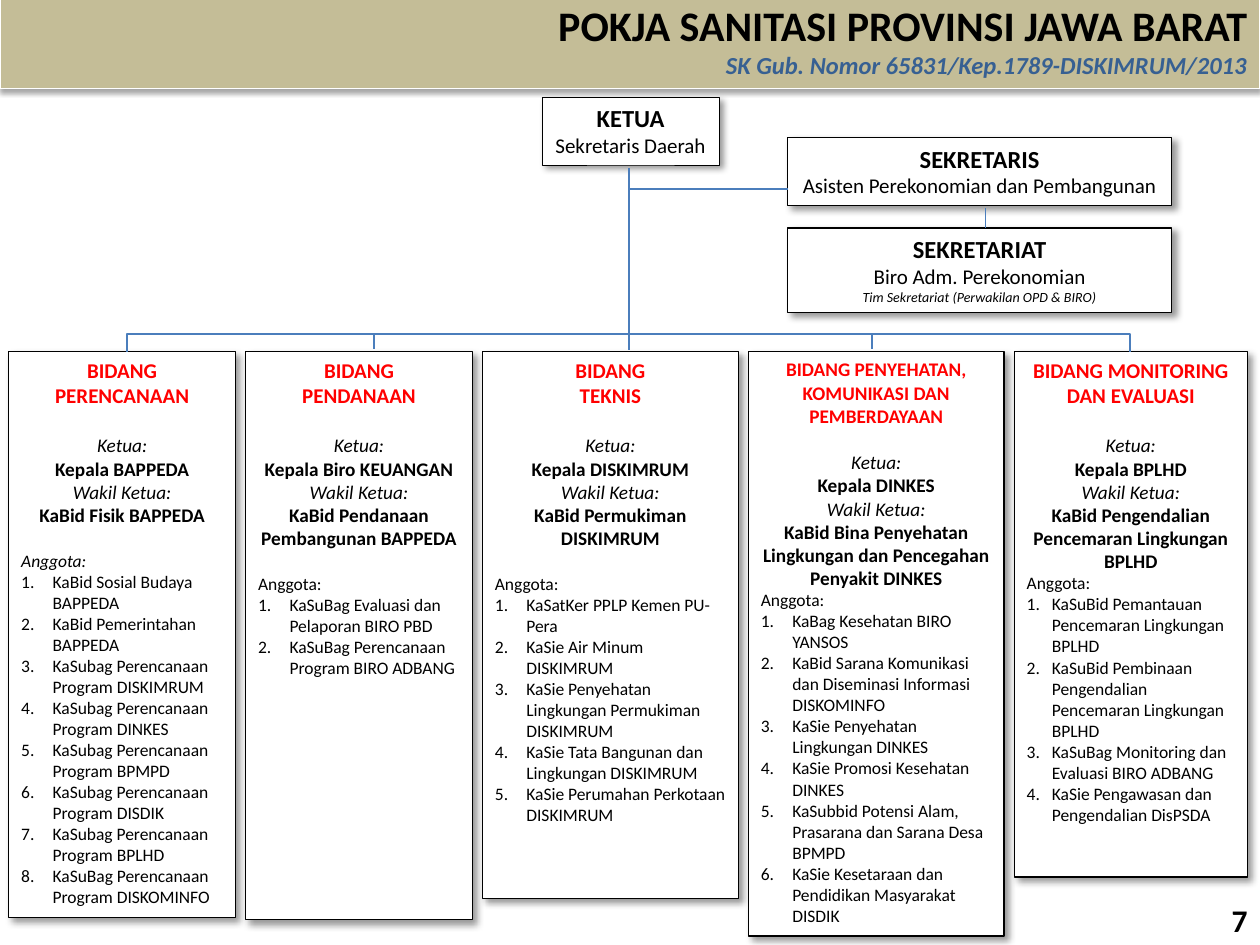
from dataclasses import dataclass

from lxml.etree import SubElement
from pptx import Presentation
from pptx.dml.color import RGBColor
from pptx.enum.shapes import MSO_CONNECTOR as Link, MSO_SHAPE as Shape
from pptx.enum.text import MSO_ANCHOR as Anchor, PP_ALIGN as Align
from pptx.oxml.ns import qn
from pptx.util import Inches, Pt

COLORS = {"black": "000000", "white": "FFFFFF", "red": "FF0000",
          "link": "4B7EBC", "band": "C4BD97", "decree": "376092"}
FONT = "Calibri"
LINE_HEIGHT = 1.22  # line height of the font, in ems
BIDANG_TOP, BUS_Y = 2.79, 2.65


@dataclass
class Line:
    text: str
    size: float
    bold: bool = False
    italic: bool = False
    color: str = "black"
    align: Align = Align.CENTER
    gap: float = 0  # text size of the empty line above
    hang: float = 0  # hanging indent of a numbered item


@dataclass
class Shadow:
    alpha: int
    blur: float
    dist: float
    angle: int


@dataclass
class Bidang:
    left: float
    width: float
    height: float
    title: list[str]
    ketua: str
    wakil: str
    anggota: list[str]
    title_size: float = 12
    anggota_gap: float = 0
    anggota_italic: bool = False
    hang: float = 0.25


BOX_SHADOW = Shadow(40, 4, 3, 45)
BAND_SHADOW = Shadow(35, 3.1, 1.8, 90)


def rgb(name: str) -> RGBColor:
    return RGBColor.from_string(COLORS[name])


def number_item(paragraph, hang: float) -> None:
    props = paragraph._p.get_or_add_pPr()
    props.set("marL", str(Inches(hang)))
    props.set("indent", str(-Inches(hang)))
    SubElement(props, qn("a:buFont"), typeface="+mj-lt")
    SubElement(props, qn("a:buAutoNum"), type="arabicPeriod")


def write(frame, lines: list[Line]) -> None:
    frame.text = "\n".join(line.text for line in lines)
    for paragraph, line in zip(frame.paragraphs, lines):
        paragraph.alignment = line.align
        if line.gap:
            paragraph.space_before = Pt(round(line.gap * LINE_HEIGHT, 1))
        if line.hang:
            number_item(paragraph, line.hang)
        for run in paragraph.runs:
            font = run.font
            font.name, font.size = FONT, Pt(line.size)
            font.bold, font.italic = line.bold, line.italic
            font.color.rgb = rgb(line.color)


def cast_shadow(shape, shadow: Shadow) -> None:
    effects = SubElement(shape._element.spPr, qn("a:effectLst"))
    outer = SubElement(effects, qn("a:outerShdw"), blurRad=str(Pt(shadow.blur)),
                       dist=str(Pt(shadow.dist)), dir=str(shadow.angle * 60000),
                       algn="tl", rotWithShape="0")
    black = SubElement(outer, qn("a:srgbClr"), val=COLORS["black"])
    SubElement(black, qn("a:alpha"), val=str(shadow.alpha * 1000))


def add_box(slide, left: float, top: float, width: float, height: float,
            lines: list[Line], fill: str = "white", border: str = "black",
            weight: float = 0.75, shadow: Shadow = BOX_SHADOW,
            anchor: Anchor = Anchor.TOP, wrap: bool = True) -> None:
    box = slide.shapes.add_shape(Shape.RECTANGLE, Inches(left), Inches(top),
                                 Inches(width), Inches(height))
    box.fill.solid()
    box.fill.fore_color.rgb = rgb(fill)
    box.line.color.rgb = rgb(border)
    box.line.width = Pt(weight)
    cast_shadow(box, shadow)
    box.text_frame.word_wrap = wrap
    box.text_frame.vertical_anchor = anchor
    write(box.text_frame, lines)


def add_link(slide, x1: float, y1: float, x2: float, y2: float,
             weight: float = 1) -> None:
    link = slide.shapes.add_connector(Link.STRAIGHT, Inches(x1), Inches(y1),
                                      Inches(x2), Inches(y2))
    link.line.color.rgb = rgb("link")
    link.line.width = Pt(weight)
    SubElement(link._element.spPr, qn("a:effectLst"))


def add_bidang(slide, bidang: Bidang) -> None:
    lines = [Line(text, bidang.title_size, bold=True, color="red")
             for text in bidang.title]
    lines += [Line("Ketua:", 11, italic=True, gap=bidang.title_size),
              Line(bidang.ketua, 11, bold=True),
              Line("Wakil Ketua:", 11, italic=True),
              Line(bidang.wakil, 11, bold=True),
              Line("Anggota:", 10, italic=bidang.anggota_italic,
                   align=Align.LEFT, gap=bidang.anggota_gap)]
    lines += [Line(text, 10, align=Align.LEFT, hang=bidang.hang)
              for text in bidang.anggota]
    add_box(slide, bidang.left, BIDANG_TOP, bidang.width, bidang.height, lines)


BIDANGS = [
    Bidang(0.07, 1.8, 4.49, ["BIDANG PERENCANAAN"], "Kepala BAPPEDA", "KaBid Fisik BAPPEDA",
           ["KaBid Sosial Budaya BAPPEDA", "KaBid Pemerintahan BAPPEDA"]
           + [f"KaSubag Perencanaan Program {office}"
              for office in ("DISKIMRUM", "DINKES", "BPMPD", "DISDIK", "BPLHD")]
           + ["KaSuBag Perencanaan Program DISKOMINFO"],
           anggota_gap=11, anggota_italic=True),
    Bidang(1.95, 1.8, 4.51, ["BIDANG", "PENDANAAN"], "Kepala Biro KEUANGAN",
           "KaBid Pendanaan Pembangunan BAPPEDA",
           ["KaSuBag Evaluasi dan Pelaporan BIRO PBD",
            "KaSuBag Perencanaan Program BIRO ADBANG"], anggota_gap=11),
    Bidang(3.83, 2.03, 4.34, ["BIDANG", "TEKNIS"], "Kepala DISKIMRUM",
           "KaBid Permukiman DISKIMRUM",
           ["KaSatKer PPLP Kemen PU-Pera", "KaSie Air Minum DISKIMRUM",
            "KaSie Penyehatan Lingkungan Permukiman DISKIMRUM",
            "KaSie Tata Bangunan dan Lingkungan DISKIMRUM",
            "KaSie Perumahan Perkotaan DISKIMRUM"], anggota_gap=11),
    Bidang(5.94, 2.03, 4.64, ["BIDANG PENYEHATAN, KOMUNIKASI DAN PEMBERDAYAAN"],
           "Kepala DINKES", "KaBid Bina Penyehatan Lingkungan dan Pencegahan Penyakit DINKES",
           ["KaBag Kesehatan BIRO YANSOS",
            "KaBid Sarana Komunikasi dan Diseminasi Informasi DISKOMINFO",
            "KaSie Penyehatan Lingkungan DINKES", "KaSie Promosi Kesehatan DINKES",
            "KaSubbid Potensi Alam, Prasarana dan Sarana Desa BPMPD",
            "KaSie Kesetaraan dan Pendidikan Masyarakat DISDIK"], title_size=11),
    Bidang(8.05, 1.85, 4.17, ["BIDANG MONITORING DAN EVALUASI"], "Kepala BPLHD",
           "KaBid Pengendalian Pencemaran Lingkungan BPLHD",
           ["KaSuBid Pemantauan Pencemaran Lingkungan BPLHD",
            "KaSuBid Pembinaan Pengendalian Pencemaran Lingkungan BPLHD",
            "KaSuBag Monitoring dan Evaluasi BIRO ADBANG",
            "KaSie Pengawasan dan Pengendalian DisPSDA"], hang=0.2),
]


def main() -> None:
    deck = Presentation()
    deck.slide_width, deck.slide_height = Inches(10), Inches(7.5)
    slide = deck.slides.add_slide(deck.slide_layouts[6])

    # Leadership
    add_box(slide, 4.3, 0.77, 1.41, 0.54,
            [Line("KETUA", 14, bold=True), Line("Sekretaris Daerah", 12)],
            weight=0.25, wrap=False)
    add_box(slide, 6.25, 1.09, 3.05, 0.54,
            [Line("SEKRETARIS", 14, bold=True),
             Line("Asisten Perekonomian dan Pembangunan", 12)])
    add_box(slide, 6.25, 1.81, 3.05, 0.67,
            [Line("SEKRETARIAT", 14, bold=True), Line("Biro Adm. Perekonomian", 12),
             Line("Tim Sekretariat (Perwakilan OPD & BIRO)", 8, italic=True)])

    # Divisions
    for bidang in BIDANGS:
        add_bidang(slide, bidang)

    # Bus line over the divisions
    outline = slide.shapes.build_freeform(Inches(1.01), Inches(BIDANG_TOP))
    outline.add_line_segments([(Inches(x), Inches(y)) for x, y in (
        (1.01, BUS_Y), (8.97, BUS_Y), (8.97, BIDANG_TOP))], close=False)
    bus = outline.convert_to_shape()
    bus.fill.background()
    bus.line.color.rgb = rgb("link")
    bus.line.width = Pt(1)
    bus.shadow.inherit = False

    # Branches
    for x in (2.97, 6.92):
        add_link(slide, x, BUS_Y, x, 2.77)
    add_link(slide, 4.99, 1.33, 4.99, 2.78)
    add_link(slide, 5, 1.5, 6.25, 1.5)
    add_link(slide, 7.82, 1.65, 7.82, 1.81, weight=0.75)

    # Title band
    add_box(slide, 0, -0.08, 10, 0.78,
            [Line("POKJA SANITASI PROVINSI JAWA BARAT", 24, bold=True, align=Align.RIGHT),
             Line("SK Gub. Nomor 65831/Kep.1789-DISKIMRUM/2013", 14, bold=True,
                  italic=True, color="decree", align=Align.RIGHT)],
            fill="band", border="white", shadow=BAND_SHADOW, anchor=Anchor.MIDDLE)

    # Page number
    page = slide.shapes.add_textbox(Inches(9.25), Inches(7.1), Inches(0.75), Inches(0.4))
    page.text_frame.word_wrap = True
    write(page.text_frame, [Line("7", 18, bold=True, align=Align.RIGHT)])

    deck.save("out.pptx")


if __name__ == "__main__":
    main()
